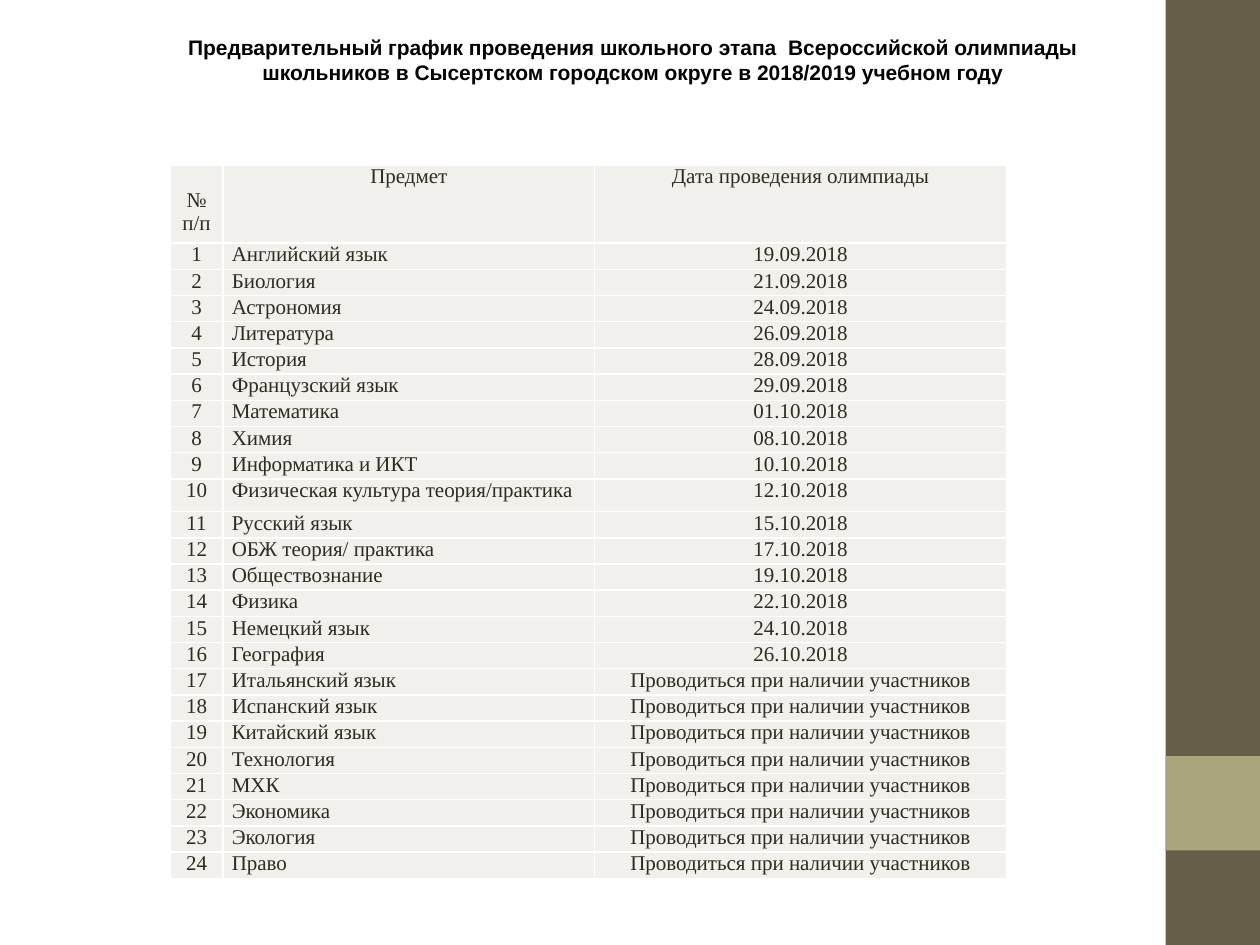
from lxml import etree
from pptx import Presentation, util as u
from pptx.dml.color import RGBColor
from pptx.enum import shapes, text
from pptx.oxml.ns import qn

WIDTH, HEIGHT = u.Inches(10), u.Inches(7.5)
COLORS = {"bar": "675E47", "accent": "A9A57C", "cell": "F1F0EC",
          "border": "FFFFFF", "ink": "2F2B20", "title": "000000"}
TITLE = ("Предварительный график проведения школьного этапа  Всероссийской "
         "олимпиады школьников в Сысертском городском округе в 2018/2019 учебном году")
HEADERS = ("\t№ п/п", "Предмет", "Дата проведения олимпиады")
ON_DEMAND = "Проводиться при наличии участников"
DATED = [
    ("Английский язык", "19.09.2018"),
    ("Биология", "21.09.2018"),
    ("Астрономия", "24.09.2018"),
    ("Литература", "26.09.2018"),
    ("История", "28.09.2018"),
    ("Французский язык", "29.09.2018"),
    ("Математика", "01.10.2018"),
    ("Химия", "08.10.2018"),
    ("Информатика и ИКТ", "10.10.2018"),
    ("Физическая культура теория/практика", "12.10.2018"),
    ("Русский язык", "15.10.2018"),
    ("ОБЖ теория/ практика", "17.10.2018"),
    ("Обществознание", "19.10.2018"),
    ("Физика", "22.10.2018"),
    ("Немецкий язык", "24.10.2018"),
    ("География", "26.10.2018"),
]
UNDATED = ["Итальянский язык", "Испанский язык", "Китайский язык", "Технология",
           "МХК", "Экономика", "Экология", "Право"]
COLUMN_WIDTHS = (0.42, 2.95, 3.27)
TABLE_HEIGHT = 5.67
SPECIAL_ROWS = {0: 0.62, 10: 0.26}


def color(name):
    return RGBColor.from_string(COLORS[name])


def set_values(target, values):
    for name, value in values.items():
        setattr(target, name, value)


def format_text(para, font, ink, align, bold=False):
    para.alignment = align
    set_values(para.font, {"name": font, "size": u.Pt(12), "bold": bold})
    para.font.color.rgb = color(ink)


def add_bar(page, top, height, fill):
    left = int(WIDTH * 0.925)
    bar = page.shapes.add_shape(shapes.MSO_SHAPE.RECTANGLE, left, int(HEIGHT * top),
                                WIDTH - left, int(HEIGHT * height))
    bar.shadow.inherit = False
    bar.fill.solid()
    bar.fill.fore_color.rgb = color(fill)
    bar.line.fill.background()


def format_title(page):
    box = page.shapes.title
    set_values(box, {"left": u.Inches(1.35), "top": u.Inches(0.22),
                     "width": u.Inches(7.35), "height": u.Inches(0.5)})
    frame = box.text_frame
    frame.text = TITLE
    set_values(frame, {"word_wrap": True, "vertical_anchor": text.MSO_ANCHOR.MIDDLE,
                       "auto_size": text.MSO_AUTO_SIZE.SHAPE_TO_FIT_TEXT})
    format_text(frame.paragraphs[0], "Arial", "title", text.PP_ALIGN.CENTER, True)


def add_borders(cell):
    properties = cell._tc.get_or_add_tcPr()
    for index, side in enumerate(("lnL", "lnR", "lnT", "lnB")):
        line = etree.Element(qn(f"a:{side}"), w=str(u.Pt(1)))
        fill = etree.SubElement(line, qn("a:solidFill"))
        etree.SubElement(fill, qn("a:srgbClr"), val=COLORS["border"])
        properties.insert(index, line)


def fill_cell(cell, content, align):
    cell.text = content
    set_values(cell, {"margin_left": u.Inches(0.07), "margin_right": u.Inches(0.07),
                      "margin_top": 0, "margin_bottom": 0})
    cell.fill.solid()
    cell.fill.fore_color.rgb = color("cell")
    add_borders(cell)
    format_text(cell.text_frame.paragraphs[0], "Times New Roman", "ink", align)


def add_schedule(page):
    subjects = DATED + [(subject, ON_DEMAND) for subject in UNDATED]
    rows = [HEADERS] + [(str(number), *entry) for number, entry in enumerate(subjects, 1)]
    table = page.shapes.add_table(
        len(rows), len(HEADERS), u.Inches(1.35), u.Inches(1.31),
        u.Inches(sum(COLUMN_WIDTHS)), u.Inches(TABLE_HEIGHT)).table
    set_values(table, {"first_row": False, "horz_banding": False})
    for column, width in zip(table.columns, COLUMN_WIDTHS):
        column.width = u.Inches(width)
    regular = (TABLE_HEIGHT - sum(SPECIAL_ROWS.values())) / (len(rows) - len(SPECIAL_ROWS))
    for row, values in enumerate(rows):
        table.rows[row].height = u.Inches(SPECIAL_ROWS.get(row, regular))
        for column, content in enumerate(values):
            is_subject = row > 0 and column == 1
            align = text.PP_ALIGN.LEFT if is_subject else text.PP_ALIGN.CENTER
            fill_cell(table.cell(row, column), content, align)


def main():
    deck = Presentation()
    set_values(deck, {"slide_width": WIDTH, "slide_height": HEIGHT})
    page = deck.slides.add_slide(deck.slide_layouts[5])
    add_bar(page, 0, 1, "bar")
    add_bar(page, 0.8, 0.1, "accent")
    format_title(page)
    add_schedule(page)
    deck.save("out.pptx")


if __name__ == "__main__":
    main()
